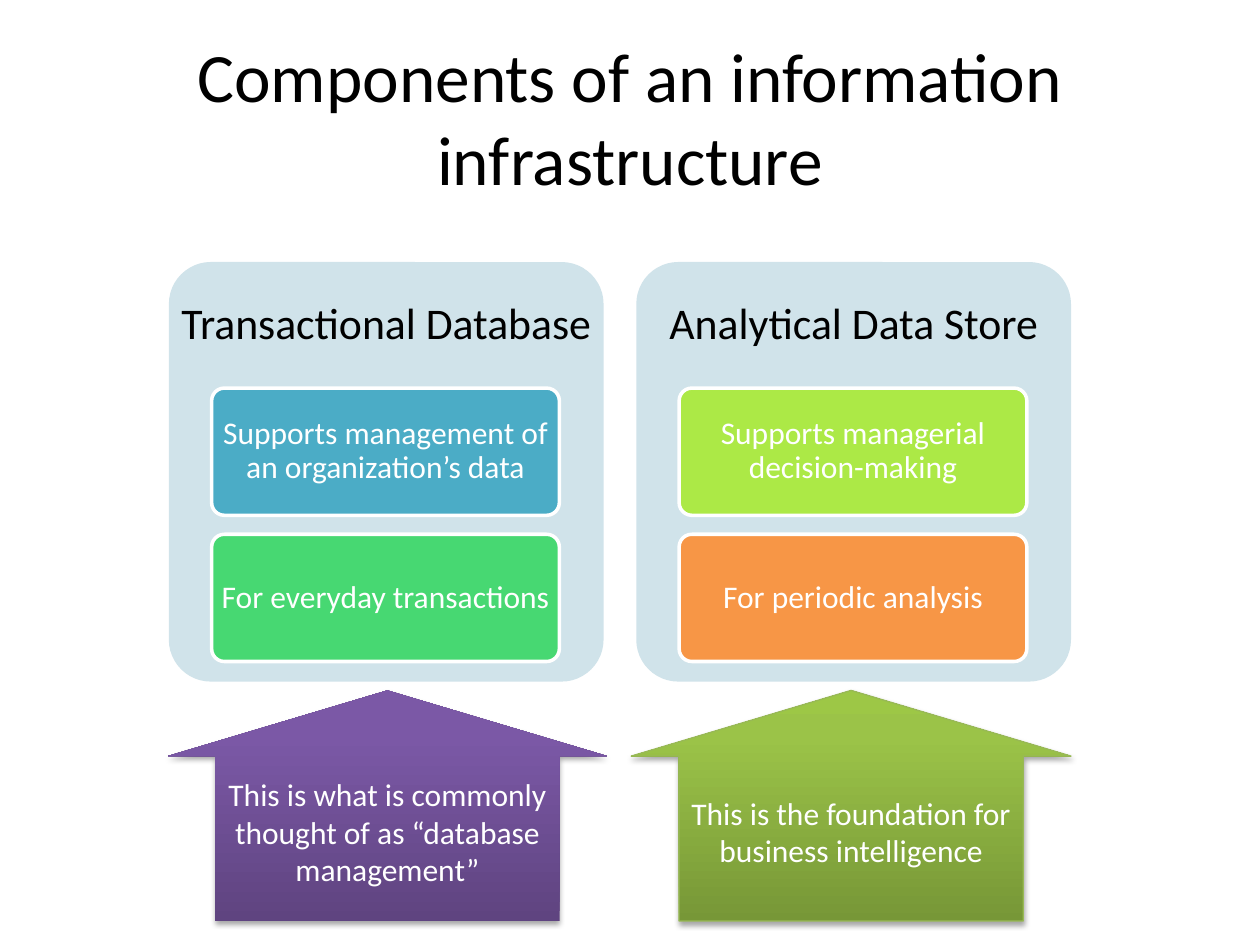
from copy import deepcopy
from lxml import etree
from pptx import Presentation
from pptx.dml.color import RGBColor
from pptx.enum.shapes import MSO_SHAPE
from pptx.enum.text import MSO_ANCHOR, PP_ALIGN
from pptx.oxml import parse_xml
from pptx.oxml.ns import qn
from pptx.util import Inches, Pt

BLACK = RGBColor(0x00, 0x00, 0x00)
WHITE = RGBColor(0xFF, 0xFF, 0xFF)
PANEL = RGBColor(0xD0, 0xE3, 0xEA)
TEAL = RGBColor(0x4B, 0xAC, 0xC6)
GREEN = RGBColor(0x47, 0xD8, 0x72)
LIME = RGBColor(0xAC, 0xE9, 0x46)
ORANGE = RGBColor(0xF7, 0x96, 0x46)
OLIVE_LINE = RGBColor(0x98, 0xB9, 0x55)
PURPLES = [RGBColor(0x5F, 0x44, 0x80), RGBColor(0x7B, 0x58, 0xA6), RGBColor(0x7C, 0x57, 0xA8)]
OLIVES = [RGBColor(0x77, 0x97, 0x37), RGBColor(0x9B, 0xC3, 0x48), RGBColor(0x9D, 0xC7, 0x46)]

SHADOW = (
    '<a:outerShdw xmlns:a="http://schemas.openxmlformats.org/drawingml/2006/main" '
    'blurRad="40000" dist="23000" dir="5400000" rotWithShape="0">'
    '<a:srgbClr val="000000"><a:alpha val="35000"/></a:srgbClr></a:outerShdw>'
)


def write(sp, text, size, color, inset_x=0.1, inset_y=0.05, spacing=None):
    tf = sp.text_frame
    tf.text = text
    tf.word_wrap = True
    tf.vertical_anchor = MSO_ANCHOR.MIDDLE
    tf.margin_left = tf.margin_right = Inches(inset_x)
    tf.margin_top = tf.margin_bottom = Inches(inset_y)
    p = tf.paragraphs[0]
    p.alignment = PP_ALIGN.CENTER
    p.line_spacing = spacing
    r = p.runs[0]
    r.font.name = "Calibri"
    r.font.size = Pt(size)
    r.font.color.rgb = color


def add_round_rect(left, top, width, height, color):
    sp = s.shapes.add_shape(MSO_SHAPE.ROUNDED_RECTANGLE, Inches(left), Inches(top), Inches(width), Inches(height))
    sp.adjustments[0] = 0.1
    sp.shadow.inherit = False
    sp.fill.solid()
    sp.fill.fore_color.rgb = color
    sp.line.fill.background()
    return sp


prs = Presentation()
prs.slide_width = Inches(10)
prs.slide_height = Inches(7.5)
s = prs.slides.add_slide(prs.slide_layouts[6])

title = s.shapes.add_textbox(Inches(0.5), Inches(0.3), Inches(9), Inches(1.25))
write(title, "Components of an information infrastructure", 39.6, BLACK)

columns = [
    (1.34, "Transactional Database",
     [("Supports management of an organization’s data", TEAL), ("For everyday transactions", GREEN)]),
    (5.05, "Analytical Data Store",
     [("Supports managerial decision-making", LIME), ("For periodic analysis", ORANGE)]),
]
for left, heading, cards in columns:
    add_round_rect(left, 2.08, 3.45, 3.33, PANEL)
    tb = s.shapes.add_textbox(Inches(left), Inches(2.08), Inches(3.45), Inches(1))
    write(tb, heading, 25, BLACK, 0.1, 0.1, 0.9)
    for i, (text, color) in enumerate(cards):
        card = add_round_rect(left + 0.34, 3.08 + i * 1.16, 2.76, 1.01, color)
        card.line.color.rgb = WHITE
        card.line.width = Pt(2)
        write(card, text, 18, WHITE, 0.05, 0.04, 0.9)

arrows = [
    (1.33, "This is what is commonly thought of as “database management”", PURPLES, None),
    (5.01, "This is the foundation for business intelligence", OLIVES, OLIVE_LINE),
]
for left, text, colors, line_color in arrows:
    arrow = s.shapes.add_shape(MSO_SHAPE.UP_ARROW, Inches(left), Inches(5.48), Inches(3.49), Inches(1.83))
    arrow.adjustments[0] = 0.783
    arrow.adjustments[1] = 0.285
    arrow.fill.gradient()
    arrow.fill.gradient_angle = 90
    spPr = arrow._element.spPr
    stops = spPr.find(".//" + qn("a:gsLst"))
    stops.append(deepcopy(stops[-1]))
    for stop, position, color in zip(arrow.fill.gradient_stops, (0, 0.8, 1), colors):
        stop.position = position
        stop.color.rgb = color
    if line_color:
        arrow.line.color.rgb = line_color
        arrow.line.width = Pt(0.75)
    else:
        arrow.line.fill.background()
    arrow.shadow.inherit = False
    spPr.find(qn("a:effectLst")).append(parse_xml(SHADOW))
    write(arrow, text, 18, WHITE)

prs.save("out.pptx")
